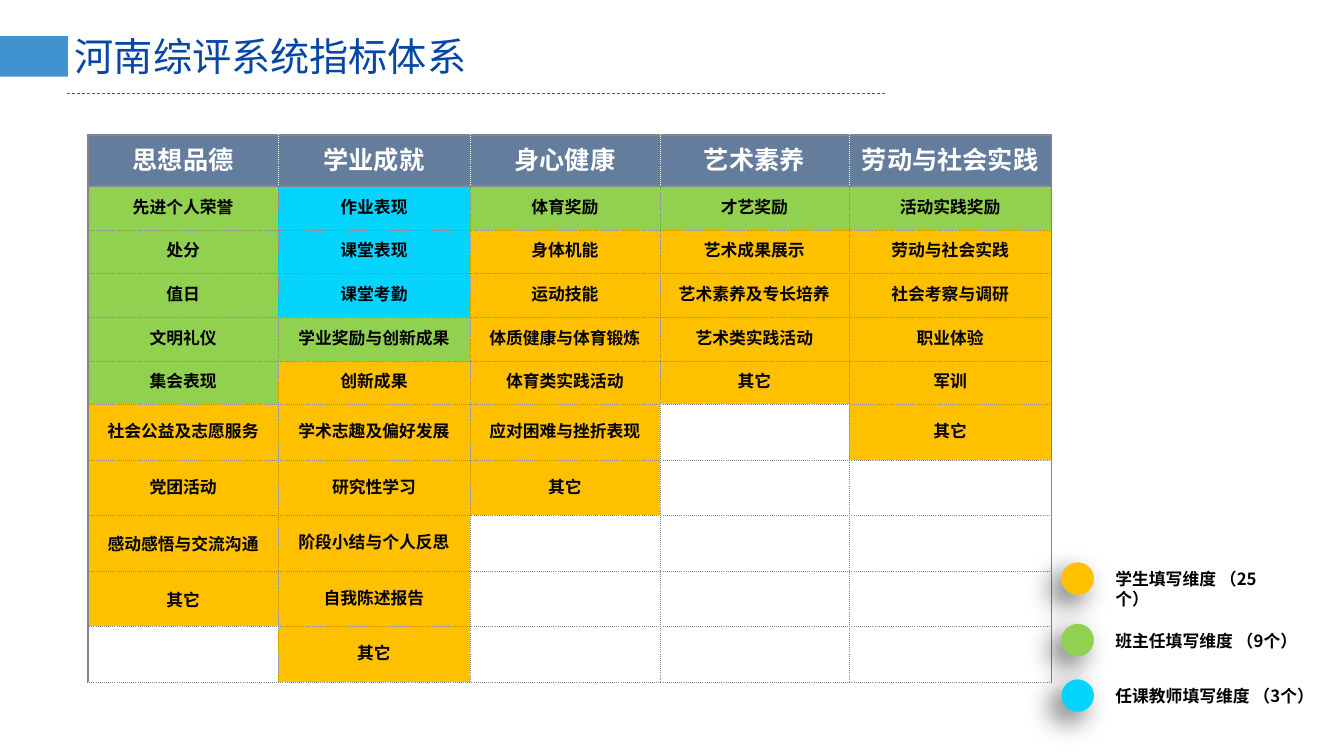
from lxml import etree
from pptx import Presentation
from pptx.dml.color import RGBColor
from pptx.enum.dml import MSO_LINE
from pptx.enum.shapes import MSO_CONNECTOR, MSO_SHAPE
from pptx.enum.text import MSO_ANCHOR, MSO_AUTO_SIZE, PP_ALIGN
from pptx.oxml.ns import qn
from pptx.util import Cm, Pt

LEFT, CENTER = PP_ALIGN.LEFT, PP_ALIGN.CENTER
TOP, MIDDLE = MSO_ANCHOR.TOP, MSO_ANCHOR.MIDDLE
NO_AUTOSIZE = MSO_AUTO_SIZE.NONE
OVAL, RECTANGLE = MSO_SHAPE.OVAL, MSO_SHAPE.RECTANGLE
STRAIGHT, DASH = MSO_CONNECTOR.STRAIGHT, MSO_LINE.DASH

BLACK = RGBColor(0x00, 0x00, 0x00)
WHITE = RGBColor(0xFF, 0xFF, 0xFF)
GRAY = RGBColor(0x84, 0x85, 0x87)
DARK_GRAY = RGBColor(0x59, 0x59, 0x59)
SLATE = RGBColor(0x65, 0x7D, 0x9D)
TITLE_BLUE = RGBColor(0x05, 0x47, 0xA7)
ACCENT_BLUE = RGBColor(0x00, 0x70, 0xC0)
STUDENT = RGBColor(0xFF, 0xC0, 0x00)
HEAD_TEACHER = RGBColor(0x92, 0xD0, 0x50)
SUBJECT_TEACHER = RGBColor(0x05, 0xD4, 0xFF)

FONT = "Noto Sans CJK SC"

# Content: heading, then groups of indicators by who fills them in
TITLE = "河南综评系统指标体系"
DIMENSIONS = [
    ("思想品德", [
        (HEAD_TEACHER, ["先进个人荣誉", "处分", "值日", "文明礼仪", "集会表现"]),
        (STUDENT, ["社会公益及志愿服务", "党团活动", "感动感悟与交流沟通", "其它"]),
    ]),
    ("学业成就", [
        (SUBJECT_TEACHER, ["作业表现", "课堂表现", "课堂考勤"]),
        (HEAD_TEACHER, ["学业奖励与创新成果"]),
        (STUDENT, ["创新成果", "学术志趣及偏好发展", "研究性学习",
                   "阶段小结与个人反思", "自我陈述报告", "其它"]),
    ]),
    ("身心健康", [
        (HEAD_TEACHER, ["体育奖励"]),
        (STUDENT, ["身体机能", "运动技能", "体质健康与体育锻炼", "体育类实践活动",
                   "应对困难与挫折表现", "其它"]),
    ]),
    ("艺术素养", [
        (HEAD_TEACHER, ["才艺奖励"]),
        (STUDENT, ["艺术成果展示", "艺术素养及专长培养", "艺术类实践活动", "其它"]),
    ]),
    ("劳动与社会实践", [
        (HEAD_TEACHER, ["活动实践奖励"]),
        (STUDENT, ["劳动与社会实践", "社会考察与调研", "职业体验", "军训", "其它"]),
    ]),
]
# Colour, label, top and label width in centimetres
LEGEND = [
    (STUDENT, "学生填写维度 （25个）", 14.17, 4.6),
    (HEAD_TEACHER, "班主任填写维度 （9个）", 15.72, 5.1),
    (SUBJECT_TEACHER, "任课教师填写维度 （3个）", 17.12, 5.74),
]
COLUMN_WIDTHS = [4.79, 4.83, 4.79, 4.76, 5.11]
ROW_HEIGHTS = [1.29] + [1.1] * 5 + [1.4] * 5


def write_text(frame, text, size=12, color=BLACK, bold=True, font=FONT, align=LEFT):
    para = frame.paragraphs[0]
    para.alignment = align
    span = para.add_run()
    span.text = text
    span.font.size = Pt(size)
    span.font.bold = bold
    span.font.name = font
    span.font.color.rgb = color
    east_asian = etree.SubElement(span.font._element, qn("a:ea"))
    east_asian.set("typeface", FONT)


def set_border(cell, side, color, width, dash):
    properties = cell._tc.get_or_add_tcPr()
    line = etree.Element(qn(f"a:ln{side}"), w=str(Pt(width)))
    fill = etree.SubElement(line, qn("a:solidFill"))
    etree.SubElement(fill, qn("a:srgbClr"), val=str(color))
    etree.SubElement(line, qn("a:prstDash"), val=dash)
    # Borders come before the fill, in the order L, R, T, B
    properties.insert("LRTB".index(side), line)


def add_flat_shape(slide, kind, left, top, width, height, color):
    shape = slide.shapes.add_shape(kind, Cm(left), Cm(top), Cm(width), Cm(height))
    shape.shadow.inherit = False
    shape.fill.solid()
    shape.fill.fore_color.rgb = color
    shape.line.fill.background()
    return shape


def add_title(slide):
    bar = add_flat_shape(slide, RECTANGLE, -0.02, 0.91, 1.73, 1.02, ACCENT_BLUE)
    color = bar._element.spPr.find(".//" + qn("a:srgbClr"))
    etree.SubElement(color, qn("a:alpha"), val="75000")

    title = slide.shapes.title
    title.left, title.top, title.width, title.height = Cm(1.63), Cm(0.69), Cm(19.46), Cm(1.45)
    title.text_frame.auto_size = NO_AUTOSIZE
    title.text_frame.vertical_anchor = MIDDLE
    write_text(title.text_frame, TITLE, size=28, color=TITLE_BLUE, bold=False)

    rule = slide.shapes.add_connector(STRAIGHT, Cm(1.7), Cm(2.34), Cm(22.33), Cm(2.34))
    rule.line.color.rgb = DARK_GRAY
    rule.line.width = Pt(0.5)
    rule.line.dash_style = DASH
    etree.SubElement(rule._element.spPr, qn("a:effectLst"))


def add_indicator_table(slide):
    last_column = len(COLUMN_WIDTHS) - 1
    table = slide.shapes.add_table(
        len(ROW_HEIGHTS), len(COLUMN_WIDTHS), Cm(2.22), Cm(3.4),
        Cm(sum(COLUMN_WIDTHS)), Cm(sum(ROW_HEIGHTS))).table
    table.first_row = table.horz_banding = False
    for row, height in zip(table.rows, ROW_HEIGHTS):
        row.height = Cm(height)

    for column, (heading, groups) in enumerate(DIMENSIONS):
        table.columns[column].width = Cm(COLUMN_WIDTHS[column])
        entries = [(SLATE, heading)]
        entries += [(color, name) for color, names in groups for name in names]
        for row in range(len(ROW_HEIGHTS)):
            cell = table.cell(row, column)
            if row < len(entries):
                color, name = entries[row]
                cell.fill.solid()
                cell.fill.fore_color.rgb = color
                if row == 0:
                    write_text(cell.text_frame, name, size=18, color=WHITE,
                               font="Calibri", align=CENTER)
                else:
                    write_text(cell.text_frame, name, align=CENTER)
                    cell.vertical_anchor = MIDDLE
                    # The last two entries of the first column keep default margins
                    if column > 0 or row < 8:
                        cell.margin_left = cell.margin_right = cell.margin_top = Cm(0.03)
                        cell.margin_bottom = Cm(0.13)
            else:
                cell.fill.background()

            # Solid frame around the heading row and the sides, dots elsewhere
            solid, dotted = (GRAY, 1.5, "solid"), (GRAY, 0.25, "sysDot")
            inner = (WHITE, 0.25, "sysDot") if row == 0 else dotted
            set_border(cell, "L", *(solid if column == 0 else inner))
            set_border(cell, "R", *(solid if column == last_column else inner))
            set_border(cell, "T", *(solid if row <= 1 else dotted))
            set_border(cell, "B", *(solid if row == 0 else dotted))


def add_legend(slide):
    for color, label, top, width in LEGEND:
        dot = add_flat_shape(slide, OVAL, 26.75, top, 0.82, 0.82, color)
        effects = dot._element.spPr.find(qn("a:effectLst"))
        shadow = etree.SubElement(effects, qn("a:outerShdw"), blurRad=str(Pt(20)),
                                  dist=str(Pt(10)), dir=str(135 * 60000), rotWithShape="0")
        shade = etree.SubElement(shadow, qn("a:srgbClr"), val=str(BLACK))
        etree.SubElement(shade, qn("a:alpha"), val="60000")

        box = slide.shapes.add_textbox(Cm(27.86), Cm(top + 0.04), Cm(width), Cm(0.77))
        box.text_frame.word_wrap = True
        box.text_frame.vertical_anchor = TOP
        write_text(box.text_frame, label)


def main():
    deck = Presentation()
    deck.slide_width, deck.slide_height = Cm(33.87), Cm(19.05)
    page = deck.slides.add_slide(deck.slide_layouts[5])
    add_indicator_table(page)
    add_legend(page)
    add_title(page)
    deck.save("out.pptx")


if __name__ == "__main__":
    main()
